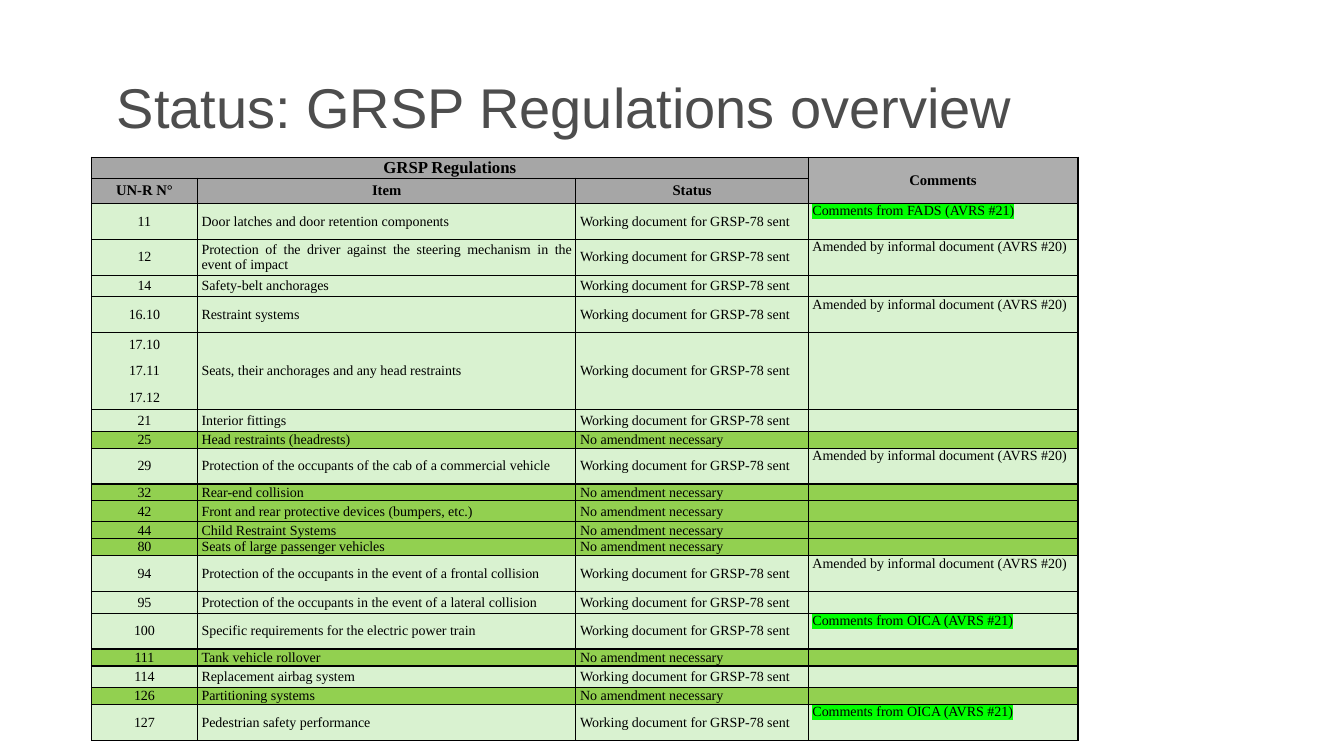
from lxml import etree
from pptx import Presentation
from pptx.dml.color import RGBColor
from pptx.enum import text
from pptx.oxml import ns
from pptx.util import Pt

SERIF = "Times New Roman"
BLACK = "000000"
PENDING, DONE, HIGHLIGHT = "D9F2D0", "92D050", "00FF00"
COLUMN_WIDTHS = (75.6, 270.4, 166, 192.6)
HEADER_HEIGHTS = (15, 18)
TALL, MEDIUM, THIN = 25.6, 15.5, 12.1
SPECIAL_HEIGHTS = {"42": 15, "17.10\n17.11\n17.12": 55}

SENT = "Working document for GRSP-78 sent"
UNCHANGED = "No amendment necessary"
AMENDED = "Amended by informal document (AVRS #20)"
FADS = "Comments from FADS (AVRS #21)"
OICA = "Comments from OICA (AVRS #21)"

REGULATIONS = (
    ("11", "Door latches and door retention components", SENT, FADS),
    ("12", "Protection of the driver against the steering mechanism in the event of impact", SENT, AMENDED),
    ("14", "Safety-belt anchorages", SENT, ""),
    ("16.10", "Restraint systems", SENT, AMENDED),
    ("17.10\n17.11\n17.12", "Seats, their anchorages and any head restraints", SENT, ""),
    ("21", "Interior fittings", SENT, ""),
    ("25", "Head restraints (headrests)", UNCHANGED, ""),
    ("29", "Protection of the occupants of the cab of a commercial vehicle", SENT, AMENDED),
    ("32", "Rear-end collision", UNCHANGED, ""),
    ("42", "Front and rear protective devices (bumpers, etc.)", UNCHANGED, ""),
    ("44", "Child Restraint Systems", UNCHANGED, ""),
    ("80", "Seats of large passenger vehicles", UNCHANGED, ""),
    ("94", "Protection of the occupants in the event of a frontal collision", SENT, AMENDED),
    ("95", "Protection of the occupants in the event of a lateral collision", SENT, ""),
    ("100", "Specific requirements for the electric power train", SENT, OICA),
    ("111", "Tank vehicle rollover", UNCHANGED, ""),
    ("114", "Replacement airbag system", SENT, ""),
    ("126", "Partitioning systems", UNCHANGED, ""),
    ("127", "Pedestrian safety performance", SENT, OICA),
)


def color(value):
    return RGBColor.from_string(value)


def set_font(font, name, size, value, bold=False):
    font.name = name
    font.size = Pt(size)
    font.bold = bold
    font.color.rgb = color(value)


def add_solid(parent, tag, value):
    element = etree.SubElement(parent, ns.qn(tag))
    etree.SubElement(element, ns.qn("a:srgbClr"), val=value)


def add_borders(cell):
    properties = cell._tc.get_or_add_tcPr()
    for side in ("L", "R", "T", "B"):
        line = etree.SubElement(properties, ns.qn(f"a:ln{side}"), w=str(Pt(1)))
        add_solid(line, "a:solidFill", BLACK)


def fill_cell(cell, content, fill, align, size=10, bold=False, anchor=text.MSO_ANCHOR.MIDDLE):
    add_borders(cell)
    cell.fill.solid()
    cell.fill.fore_color.rgb = color(fill)
    cell.margin_left = cell.margin_right = Pt(3)
    cell.margin_top = cell.margin_bottom = Pt(0)
    cell.vertical_anchor = anchor
    cell.text = content
    for paragraph in cell.text_frame.paragraphs:
        paragraph.alignment = align
        paragraph.space_after = Pt(8)
        set_font(paragraph.font, SERIF, size, BLACK, bold)


def row_height(number, status, comment):
    usual = TALL if comment else MEDIUM if status == SENT else THIN
    return SPECIAL_HEIGHTS.get(number, usual)


def add_title(slide, content):
    shape = slide.shapes.add_textbox(Pt(76.3), Pt(38.2), Pt(828), Pt(62))
    frame = shape.text_frame
    frame.word_wrap = True
    frame.vertical_anchor = text.MSO_ANCHOR.BOTTOM
    frame.margin_bottom = Pt(0)
    paragraph = frame.paragraphs[0]
    paragraph.text = content
    paragraph.line_spacing = 0.9
    set_font(paragraph.font, "Arial", 40, "4D4D4D")


def fill_header(table):
    center = text.PP_ALIGN.CENTER
    for column in range(3):
        fill_cell(table.cell(0, column), "", "A6A6A6", center, 12, True)
    fill_cell(table.cell(0, 0), "GRSP Regulations", "A6A6A6", center, 12, True)
    for column, label in enumerate(("UN-R N°", "Item", "Status")):
        fill_cell(table.cell(1, column), label, "A6A6A6", center, 10.5, True)
    fill_cell(table.cell(0, 3), "Comments", "ADADAD", center, 10.5, True)
    fill_cell(table.cell(1, 3), "", "ADADAD", center, 10.5, True)
    table.cell(0, 0).merge(table.cell(0, 2))
    table.cell(0, 3).merge(table.cell(1, 3))


def fill_regulation(table, row, regulation):
    number, item, status, comment = regulation
    fill = PENDING if status == SENT else DONE
    fill_cell(table.cell(row, 0), number, fill, text.PP_ALIGN.CENTER)
    fill_cell(table.cell(row, 1), item, fill, text.PP_ALIGN.JUSTIFY)
    fill_cell(table.cell(row, 2), status, fill, text.PP_ALIGN.JUSTIFY)
    remark = table.cell(row, 3)
    fill_cell(remark, comment, fill, text.PP_ALIGN.LEFT, anchor=text.MSO_ANCHOR.TOP)
    if comment in (FADS, OICA):
        run = remark.text_frame.paragraphs[0].runs[0]
        add_solid(run._r.get_or_add_rPr(), "a:highlight", HIGHLIGHT)


def add_regulation_table(slide):
    heights = HEADER_HEIGHTS + tuple(
        row_height(number, status, comment) for number, _, status, comment in REGULATIONS
    )
    table = slide.shapes.add_table(
        len(heights), len(COLUMN_WIDTHS), Pt(65.4), Pt(112.3), Pt(sum(COLUMN_WIDTHS)), Pt(sum(heights))
    ).table
    table.first_row = table.horz_banding = False
    for column, width in zip(table.columns, COLUMN_WIDTHS):
        column.width = Pt(width)
    for row, height in zip(table.rows, heights):
        row.height = Pt(height)
    fill_header(table)
    for row, regulation in enumerate(REGULATIONS, start=len(HEADER_HEIGHTS)):
        fill_regulation(table, row, regulation)


def main():
    presentation = Presentation()
    presentation.slide_width = Pt(960)
    presentation.slide_height = Pt(540)
    slide = presentation.slides.add_slide(presentation.slide_layouts[6])
    add_title(slide, "Status: GRSP Regulations overview")
    add_regulation_table(slide)
    presentation.save("out.pptx")


if __name__ == "__main__":
    main()
